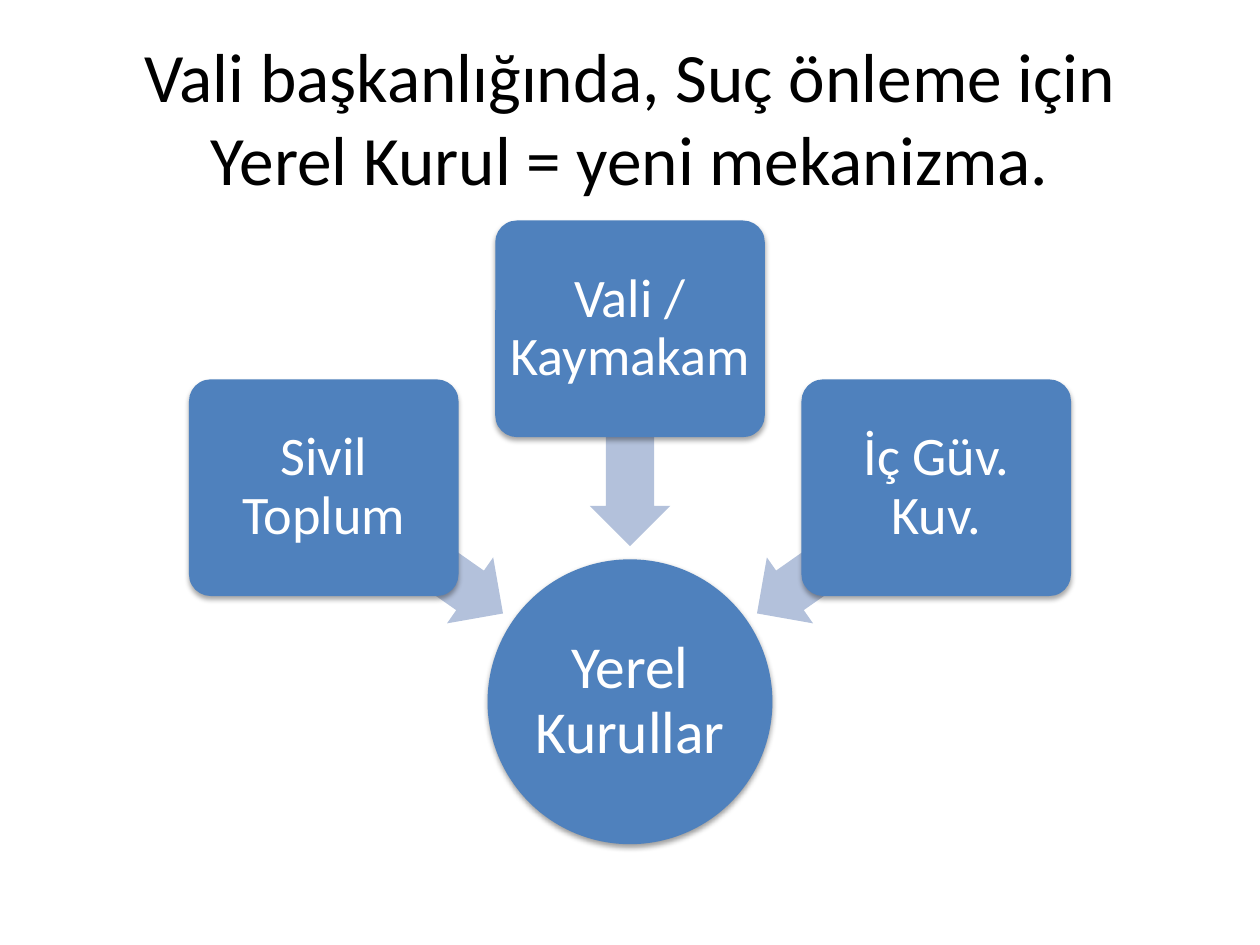
from lxml import etree
from pptx import Presentation
from pptx.dml.color import RGBColor
from pptx.enum.shapes import MSO_SHAPE as SHAPE
from pptx.enum.text import MSO_ANCHOR as ANCHOR, PP_ALIGN as ALIGN
from pptx.oxml.ns import qn
from pptx.util import Pt

BLUE, PALE, WHITE, BLACK = "4F81BD", "B3C1DB", "FFFFFF", "000000"


def rgb(value):
    return RGBColor.from_string(value)


def write(sp, text, size, color, inset, spacing=1.0):
    tf = sp.text_frame
    frame = {"word_wrap": True, "vertical_anchor": ANCHOR.MIDDLE}
    frame.update({f"margin_{side}": Pt(inset) for side in ("left", "top", "right", "bottom")})
    for name, value in frame.items():
        setattr(tf, name, value)
    p = tf.paragraphs[0]
    p.alignment, p.line_spacing = ALIGN.CENTER, spacing
    r = p.add_run()
    r.text = text
    for name, value in {"name": "Calibri", "size": Pt(size)}.items():
        setattr(r.font, name, value)
    r.font.color.rgb = rgb(color)


def add_solid(s, kind, box, color):
    sp = s.shapes.add_shape(kind, *map(Pt, box))
    sp.shadow.inherit = False
    sp.fill.solid()
    sp.fill.fore_color.rgb = rgb(color)
    sp.line.fill.background()
    return sp


def add_shadow(sp, distance, opacity):
    effects = sp._element.spPr.find(qn("a:effectLst"))
    shadow = etree.SubElement(effects, qn("a:outerShdw"), blurRad=str(Pt(3.1)),
                              dist=str(Pt(distance)), dir="5400000", rotWithShape="0")
    tint = etree.SubElement(shadow, qn("a:srgbClr"), val=BLACK)
    etree.SubElement(tint, qn("a:alpha"), val=str(opacity * 1000))


def add_title(s, box, text):
    sp = s.shapes.add_textbox(*map(Pt, box))
    write(sp, text, 39.6, BLACK, 3.6)


def add_hub(s, box, text):
    sp = add_solid(s, SHAPE.OVAL, box, BLUE)
    add_shadow(sp, 1.6, 38)
    write(sp, text, 34, WHITE, 1.4, 0.9)


def add_arrow(s, box, angle):
    sp = add_solid(s, SHAPE.LEFT_ARROW, box, PALE)
    sp.adjustments[0], sp.adjustments[1] = 0.6, 0.5
    sp.rotation = angle


def add_card(s, box, text):
    sp = add_solid(s, SHAPE.ROUNDED_RECTANGLE, box, BLUE)
    sp.adjustments[0] = 0.1
    add_shadow(sp, 1.8, 35)
    write(sp, text, 31, WHITE, 4, 0.9)


def add_diagram(s, left, top, width):
    center = left + width / 2
    card_w, card_h, hub, arrow_w, arrow_h = 154, 123.8, 162.8, 124.6, 46
    step = (width - card_w) / 2
    add_hub(s, (center - hub / 2, top + 193.6, hub, hub), "Yerel Kurullar")
    members = [("Sivil Toplum", -1, 215), ("Vali / Kaymakam", 0, 270), ("İç Güv. Kuv.", 1, 325)]
    for text, side, angle in members:
        arrow_x = center + side * 123.6 - arrow_w / 2
        arrow_y = top + 123.8 + abs(side) * 65 - arrow_h / 2
        add_arrow(s, (arrow_x, arrow_y, arrow_w, arrow_h), angle)
        card_x = center + side * step - card_w / 2
        add_card(s, (card_x, top + abs(side) * 90.8, card_w, card_h), text)


def main():
    prs = Presentation()
    prs.slide_width, prs.slide_height = Pt(720), Pt(540)
    s = prs.slides.add_slide(prs.slide_layouts[6])
    add_title(s, (36, 21.6, 648, 90), "Vali başkanlığında, Suç önleme için Yerel Kurul = yeni mekanizma.")
    add_diagram(s, 108, 126, 504)
    prs.save("out.pptx")


if __name__ == "__main__":
    main()
